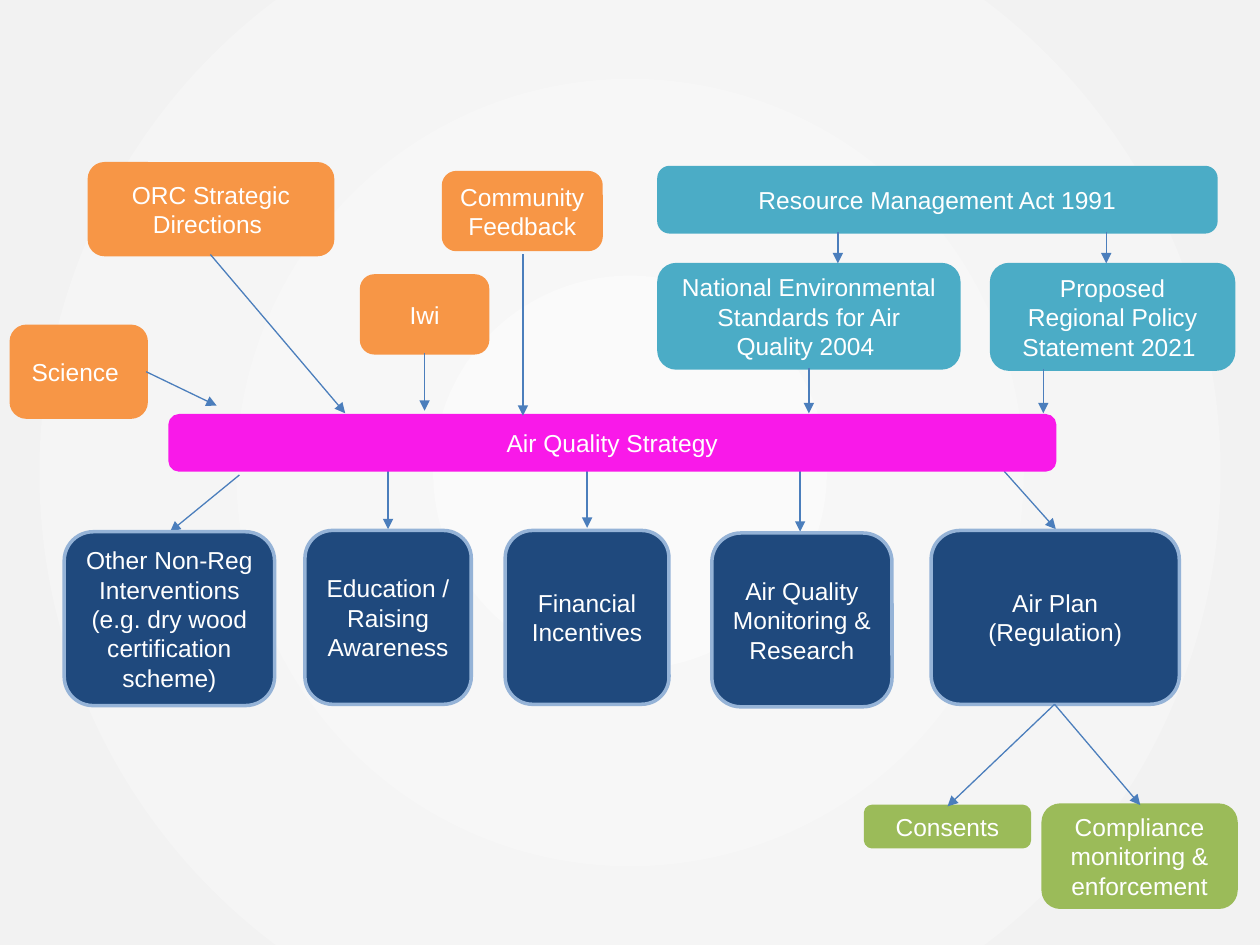
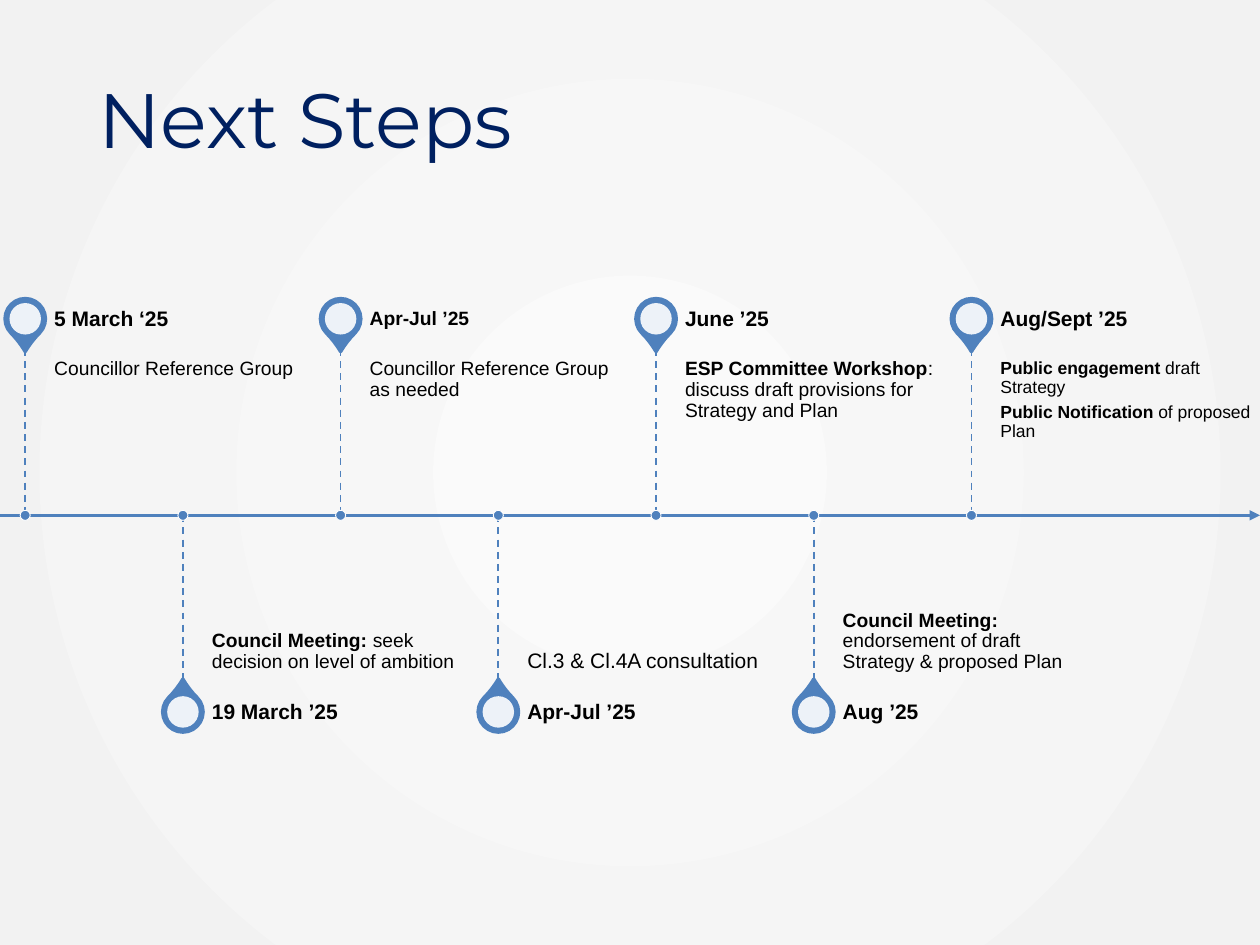
from typing import Any, NamedTuple

from lxml.etree import SubElement
from pptx import Presentation
from pptx.dml.color import RGBColor
from pptx.enum.dml import MSO_LINE
from pptx.enum.shapes import MSO_CONNECTOR, MSO_SHAPE
from pptx.enum.text import MSO_ANCHOR, PP_ALIGN
from pptx.oxml.ns import qn
from pptx.util import Inches, Pt

WHITE = RGBColor(0xFF, 0xFF, 0xFF)
BLACK = RGBColor(0x00, 0x00, 0x00)
CENTRE_GREY = RGBColor(0xFA, 0xFA, 0xFA)
EDGE_GREY = RGBColor(0xF2, 0xF2, 0xF2)
TITLE_NAVY = RGBColor(0x00, 0x20, 0x60)
ARROW_BLUE = RGBColor(0x4B, 0x7E, 0xBC)
TIMELINE_BLUE = RGBColor(0x4F, 0x81, 0xBD)
ORANGE = RGBColor(0xF7, 0x96, 0x46)
TEAL = RGBColor(0x4B, 0xAC, 0xC6)
MAGENTA = RGBColor(0xF9, 0x19, 0xE9)
NAVY = RGBColor(0x1F, 0x49, 0x7D)
PALE_BLUE = RGBColor(0x95, 0xB3, 0xD7)
GREEN = RGBColor(0x9B, 0xBB, 0x59)

BODY_FONT, TITLE_FONT = "Arial", "Montserrat"


class Style(NamedTuple):
    fill: RGBColor
    outline: RGBColor


INPUT = Style(ORANGE, ORANGE)
LEGISLATION = Style(TEAL, TEAL)
STRATEGY = Style(MAGENTA, MAGENTA)
ACTION = Style(NAVY, PALE_BLUE)
OUTCOME = Style(GREEN, GREEN)


class Node(NamedTuple):
    text: str
    style: Style
    left: float
    top: float
    width: float
    height: float


class Arrow(NamedTuple):
    x1: float
    y1: float
    x2: float
    y2: float


class Part(NamedTuple):
    """A paragraph with a bold lead and a plain rest."""
    lead: str
    rest: str


class Milestone(NamedTuple):
    date: str
    details: tuple[Part, ...]
    detail_size: float = 11
    date_size: float = 12


class Side(NamedTuple):
    """Vertical places of a milestone above or below the timeline."""
    pin_centre: float
    pin_rotation: float
    date_top: float
    detail_top: float
    detail_anchor: MSO_ANCHOR
    stem_end: float


NODES = [
    Node("Air Plan (Regulation)", ACTION, 7.39, 4.21, 1.97, 1.38),
    Node("Air Quality Strategy", STRATEGY, 1.35, 3.3, 7.02, 0.43),
    Node("National Environmental Standards for Air Quality 2004 ", LEGISLATION, 5.23, 2.1, 2.38, 0.82),
    Node("Proposed Regional Policy Statement 2021 ", LEGISLATION, 7.87, 2.1, 1.92, 0.83),
    Node("Resource Management Act 1991", LEGISLATION, 5.23, 1.33, 4.42, 0.51),
    Node("ORC Strategic Directions ", INPUT, 0.71, 1.3, 1.93, 0.72),
    Node("Consents", OUTCOME, 6.87, 6.4, 1.3, 0.32),
    Node("Compliance monitoring & enforcement", OUTCOME, 8.28, 6.39, 1.53, 0.81),
    Node("Financial Incentives", ACTION, 4.01, 4.21, 1.3, 1.38),
    Node("Air Quality Monitoring & Research", ACTION, 5.65, 4.23, 1.43, 1.38),
    Node("Education / Raising Awareness", ACTION, 2.42, 4.21, 1.32, 1.38),
    Node("Other Non-Reg Interventions (e.g. dry wood certification scheme)", ACTION, 0.51, 4.22, 1.67, 1.38),
    Node("Science ", INPUT, 0.09, 2.59, 1.07, 0.72),
    Node("Iwi", INPUT, 2.87, 2.19, 1, 0.61),
    Node("Community Feedback", INPUT, 3.52, 1.37, 1.25, 0.61),
]

STRATEGY_TO_ACTIONS = [
    Arrow(1.9, 3.77, 1.35, 4.22),
    Arrow(3.08, 3.73, 3.08, 4.2),
    Arrow(4.66, 3.72, 4.66, 4.19),
    Arrow(6.35, 3.74, 6.35, 4.22),
    Arrow(7.97, 3.74, 8.38, 4.2),
]
OTHER_ARROWS = [
    Arrow(6.42, 2.92, 6.42, 3.28),
    Arrow(8.28, 2.93, 8.28, 3.28),
    Arrow(1.67, 2.02, 2.74, 3.28),
    Arrow(8.37, 5.59, 7.52, 6.4),
    Arrow(8.37, 5.59, 9.05, 6.39),
    Arrow(1.16, 2.95, 1.72, 3.22),
    Arrow(3.37, 2.8, 3.37, 3.26),
    Arrow(6.65, 1.84, 6.65, 2.09),
    Arrow(8.78, 1.84, 8.78, 2.09),
    Arrow(4.15, 2.02, 4.15, 3.3),
]

AXIS_Y = 4.09
FIRST_X, LAST_X = 0.2, 7.71
ABOVE = Side(2.53, 135, 2.3, 2.77, MSO_ANCHOR.TOP, 2.77)
BELOW = Side(5.65, 315, 5.42, AXIS_Y, MSO_ANCHOR.BOTTOM, 5.42)
MILESTONES = [
    Milestone("5 March ‘25", (Part("", "Councillor Reference Group"),)),
    Milestone("19 March ’25", (Part("Council Meeting:", " seek decision on level of ambition"),)),
    Milestone("Apr-Jul ’25", (Part("", "Councillor Reference Group as needed"),), date_size=11),
    Milestone("Apr-Jul ’25", (Part("", "Cl.3 & Cl.4A consultation"),), detail_size=12),
    Milestone("June ’25", (
        Part("ESP Committee Workshop", ": discuss draft provisions for Strategy and Plan"),)),
    Milestone("Aug ’25", (
        Part("Council Meeting: ", "endorsement of draft Strategy & proposed Plan"),)),
    Milestone("Aug/Sept ’25", (
        Part("Public engagement ", "draft Strategy"),
        Part("Public Notification ", "of proposed Plan")), detail_size=10),
]


def apply(target: Any, settings: dict[str, Any]) -> None:
    for name, value in settings.items():
        setattr(target, name, value)


def add_run(paragraph: Any, text: str, size: float, color: RGBColor,
            bold: bool = False, font: str = BODY_FONT) -> None:
    run = paragraph.add_run()
    run.text = text
    apply(run.font, {"name": font, "size": Pt(size), "bold": bold})
    run.font.color.rgb = color


def add_slide(deck: Any) -> Any:
    """Add a blank slide with the shared radial grey background."""
    slide = deck.slides.add_slide(deck.slide_layouts[6])
    fill = slide.background.fill
    fill.gradient()
    for stop, color in zip(fill.gradient_stops, (CENTRE_GREY, EDGE_GREY)):
        stop.color.rgb = color
    gradient = next(slide.element.iter(qn("a:gradFill")))
    gradient.remove(gradient.find(qn("a:lin")))
    radial = SubElement(gradient, qn("a:path"), {"path": "circle"})
    SubElement(radial, qn("a:fillToRect"), dict.fromkeys("ltrb", "50000"))
    return slide


def add_line(slide: Any, ends: Arrow, color: RGBColor, weight: float,
             dashed: bool = False, arrowhead: bool = True) -> None:
    connector = slide.shapes.add_connector(MSO_CONNECTOR.STRAIGHT, *map(Inches, ends))
    connector.line.color.rgb = color
    connector.line.width = Pt(weight)
    if dashed:
        connector.line.dash_style = MSO_LINE.DASH
    properties = connector.element.spPr
    if arrowhead:
        SubElement(properties.find(qn("a:ln")), qn("a:tailEnd"), {"type": "triangle"})
    SubElement(properties, qn("a:effectLst"))


def add_filled_shape(slide: Any, preset: MSO_SHAPE, box: tuple[float, ...], fill: RGBColor,
                     outline: RGBColor | None = None, weight: float = 2) -> Any:
    shape = slide.shapes.add_shape(preset, *map(Inches, box))
    shape.shadow.inherit = False
    shape.fill.solid()
    shape.fill.fore_color.rgb = fill
    if outline is None:
        shape.line.fill.background()
    else:
        shape.line.color.rgb = outline
        shape.line.width = Pt(weight)
    return shape


def add_round(slide: Any, preset: MSO_SHAPE, x: float, y: float, size: float,
              fill: RGBColor, outline: RGBColor | None = None, weight: float = 2) -> Any:
    """Add a shape of equal sides centred on x, y."""
    box = (x - size / 2, y - size / 2, size, size)
    return add_filled_shape(slide, preset, box, fill, outline, weight)


def add_text_frame(slide: Any, box: tuple[float, ...], anchor: MSO_ANCHOR,
                   insets: tuple[float, ...]) -> Any:
    frame = slide.shapes.add_textbox(*map(Inches, box)).text_frame
    left, top, right, bottom = map(Inches, insets)
    apply(frame, {"word_wrap": True, "vertical_anchor": anchor, "margin_left": left,
                  "margin_top": top, "margin_right": right, "margin_bottom": bottom})
    return frame


def add_parts(frame: Any, parts: tuple[Part, ...], size: float) -> None:
    for index, part in enumerate(parts):
        paragraph = frame.add_paragraph() if index else frame.paragraphs[0]
        apply(paragraph, {"line_spacing": 0.9, "space_after": Pt(size * 0.35)})
        for text, bold in ((part.lead, True), (part.rest, False)):
            if text:
                add_run(paragraph, text, size, BLACK, bold)


def add_node(slide: Any, node: Node) -> None:
    shape = add_filled_shape(slide, MSO_SHAPE.ROUNDED_RECTANGLE, node[2:], *node.style)
    apply(shape.text_frame, {"word_wrap": True, "vertical_anchor": MSO_ANCHOR.MIDDLE})
    paragraph = shape.text_frame.paragraphs[0]
    paragraph.alignment = PP_ALIGN.CENTER
    add_run(paragraph, node.text, 14, WHITE)


def add_milestone(slide: Any, milestone: Milestone, x: float, side: Side) -> None:
    pin = add_round(slide, MSO_SHAPE.TEAR, x, side.pin_centre, 0.32, TIMELINE_BLUE, TIMELINE_BLUE)
    pin.adjustments[0] = 1.15
    pin.rotation = side.pin_rotation
    pin_hole = add_round(slide, MSO_SHAPE.OVAL, x, side.pin_centre, 0.25, WHITE)
    hole_color = next(pin_hole.element.spPr.iter(qn("a:srgbClr")))
    SubElement(hole_color, qn("a:alpha"), {"val": "90000"})

    text_left, text_width = x + 0.23, 2.05
    details = add_text_frame(slide, (text_left, side.detail_top, text_width, 1.33),
                             side.detail_anchor, (0, 0.08, 0.05, 0.08))
    add_parts(details, milestone.details, milestone.detail_size)
    date = add_text_frame(slide, (text_left, side.date_top, text_width, 0.47),
                          MSO_ANCHOR.MIDDLE, (0, 0, 0.08, 0))
    add_parts(date, (Part(milestone.date, ""),), milestone.date_size)

    top, bottom = sorted((AXIS_Y, side.stem_end))
    add_line(slide, Arrow(x, top, x, bottom), TIMELINE_BLUE, 1, dashed=True, arrowhead=False)
    add_round(slide, MSO_SHAPE.OVAL, x, AXIS_Y, 0.08, TIMELINE_BLUE, WHITE, 0.5)


def build_strategy_map(deck: Any) -> None:
    slide = add_slide(deck)
    for arrow in STRATEGY_TO_ACTIONS:
        add_line(slide, arrow, ARROW_BLUE, 0.75)
    for node in NODES:
        add_node(slide, node)
    for arrow in OTHER_ARROWS:
        add_line(slide, arrow, ARROW_BLUE, 0.75)


def build_next_steps(deck: Any) -> None:
    slide = add_slide(deck)
    add_line(slide, Arrow(0, AXIS_Y, 10, AXIS_Y), TIMELINE_BLUE, 1.5)
    pitch = (LAST_X - FIRST_X) / (len(MILESTONES) - 1)
    for index, milestone in enumerate(MILESTONES):
        add_milestone(slide, milestone, FIRST_X + index * pitch, BELOW if index % 2 else ABOVE)
    title = add_text_frame(slide, (0.68, 0.5, 4.85, 0.87), MSO_ANCHOR.MIDDLE,
                           (0.1, 0.05, 0.1, 0.05))
    add_run(title.paragraphs[0], "Next Steps", 44, TITLE_NAVY, font=TITLE_FONT)


def main() -> None:
    deck = Presentation()
    deck.slide_width, deck.slide_height = Inches(10), Inches(7.5)
    build_strategy_map(deck)
    build_next_steps(deck)
    deck.save("out.pptx")


if __name__ == "__main__":
    main()
